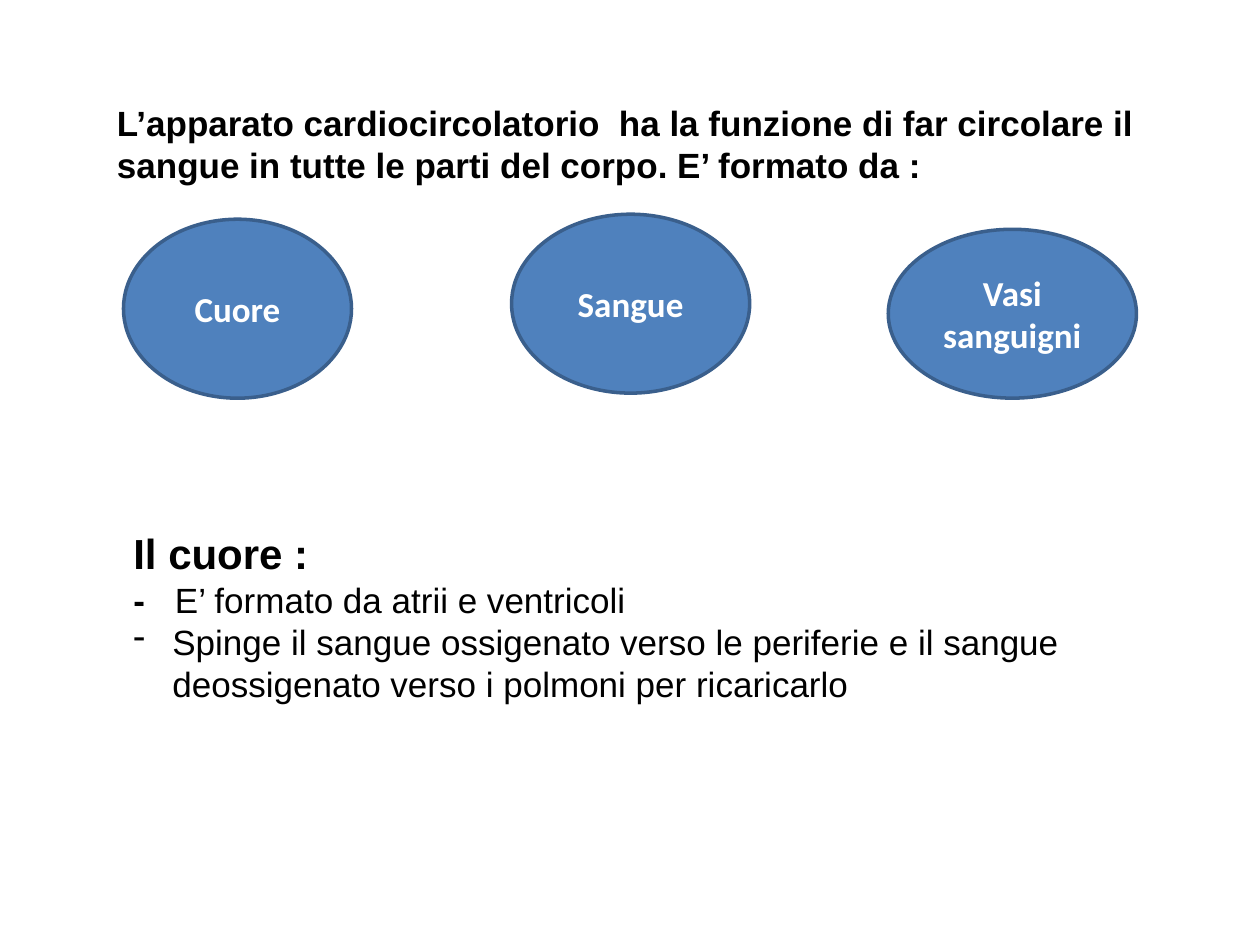
from lxml import etree
from pptx import Presentation
from pptx import util as u
from pptx.dml.color import RGBColor
from pptx.enum import shapes, text
from pptx.oxml import ns

BLACK = RGBColor(0x00, 0x00, 0x00)
WHITE = RGBColor(0xFF, 0xFF, 0xFF)
BLUE = RGBColor(0x4F, 0x81, 0xBD)
DARK_BLUE = RGBColor(0x3A, 0x5F, 0x8C)
WIDTH, HEIGHT = u.Inches(10), u.Inches(7.5)

BODY = {"name": "Arial", "size": u.Pt(20), "bold": False}
STRONG = {**BODY, "bold": True}
HEADING = {**STRONG, "size": u.Pt(24)}
LABEL = {**STRONG, "name": "Calibri"}


def inches(left, top, width, height):
    """Turn a box in inches into shares of the slide's width and height."""
    return left / 10, top / 7.5, width / 10, height / 7.5


def place(box):
    """Turn a box in shares of the slide into lengths."""
    return [round(share * side) for share, side in zip(box, (WIDTH, HEIGHT) * 2)]


def add_run(paragraph, words, style, color=BLACK):
    """Append a run with the given font values."""
    run = paragraph.add_run()
    run.text = words
    for key, value in style.items():
        setattr(run.font, key, value)
    run.font.color.rgb = color


def add_text_frame(slide, box):
    """Add a wrapping text box and return its frame."""
    frame = slide.shapes.add_textbox(*place(box)).text_frame
    frame.word_wrap = True
    frame.auto_size = text.MSO_AUTO_SIZE.SHAPE_TO_FIT_TEXT
    return frame


def hang(paragraph, indent, bullet=None):
    """Give a paragraph a hanging indent and, if asked, a bullet."""
    properties = paragraph._p.get_or_add_pPr()
    properties.set("marL", str(indent))
    properties.set("indent", str(-indent))
    if bullet:
        etree.SubElement(properties, ns.qn("a:buFontTx"))
        etree.SubElement(properties, ns.qn("a:buChar")).set("char", bullet)


def add_introduction(slide, box):
    """Write the sentence on what the system does."""
    frame = add_text_frame(slide, box)
    add_run(frame.paragraphs[0],
            "L’apparato cardiocircolatorio  ha la funzione di far circolare il "
            "sangue in tutte le parti del corpo. E’ formato da :", STRONG)


def add_component(slide, box, label):
    """Draw one labelled ellipse for a part of the system."""
    component = slide.shapes.add_shape(shapes.MSO_SHAPE.OVAL, *place(box))
    component.shadow.inherit = False
    component.fill.solid()
    component.fill.fore_color.rgb = BLUE
    component.line.color.rgb = DARK_BLUE
    component.line.width = u.Pt(2)
    frame = component.text_frame
    frame.word_wrap = True
    frame.vertical_anchor = text.MSO_ANCHOR.MIDDLE
    paragraph = frame.paragraphs[0]
    paragraph.alignment = text.PP_ALIGN.CENTER
    add_run(paragraph, label, LABEL, WHITE)


def add_heart_notes(slide, box):
    """Write the heading on the heart and its two points."""
    frame = add_text_frame(slide, box)
    add_run(frame.paragraphs[0], "Il cuore :", HEADING)
    structure = frame.add_paragraph()
    hang(structure, u.Inches(0.33))
    add_run(structure, "-\t", STRONG)
    add_run(structure, "E’ formato da atrii e ventricoli", BODY)
    task = frame.add_paragraph()
    hang(task, u.Inches(0.31), "-")
    add_run(task, "Spinge il sangue ossigenato verso le periferie e il sangue "
                  "deossigenato verso i polmoni per ricaricarlo", BODY)


def main():
    """Build the slide and save it."""
    deck = Presentation()
    deck.slide_width, deck.slide_height = WIDTH, HEIGHT
    slide = deck.slides.add_slide(deck.slide_layouts[6])
    add_introduction(slide, inches(0.83, 0.76, 8.5, 0.77))
    components = {
        "Cuore": inches(0.98, 1.74, 1.81, 1.42),
        "Sangue": inches(4.06, 1.7, 1.89, 1.42),
        "Vasi sanguigni": inches(7.05, 1.82, 1.97, 1.34),
    }
    for label, box in components.items():
        add_component(slide, box, label)
    add_heart_notes(slide, inches(0.96, 4.14, 8.19, 1.85))
    deck.save("out.pptx")


if __name__ == "__main__":
    main()
